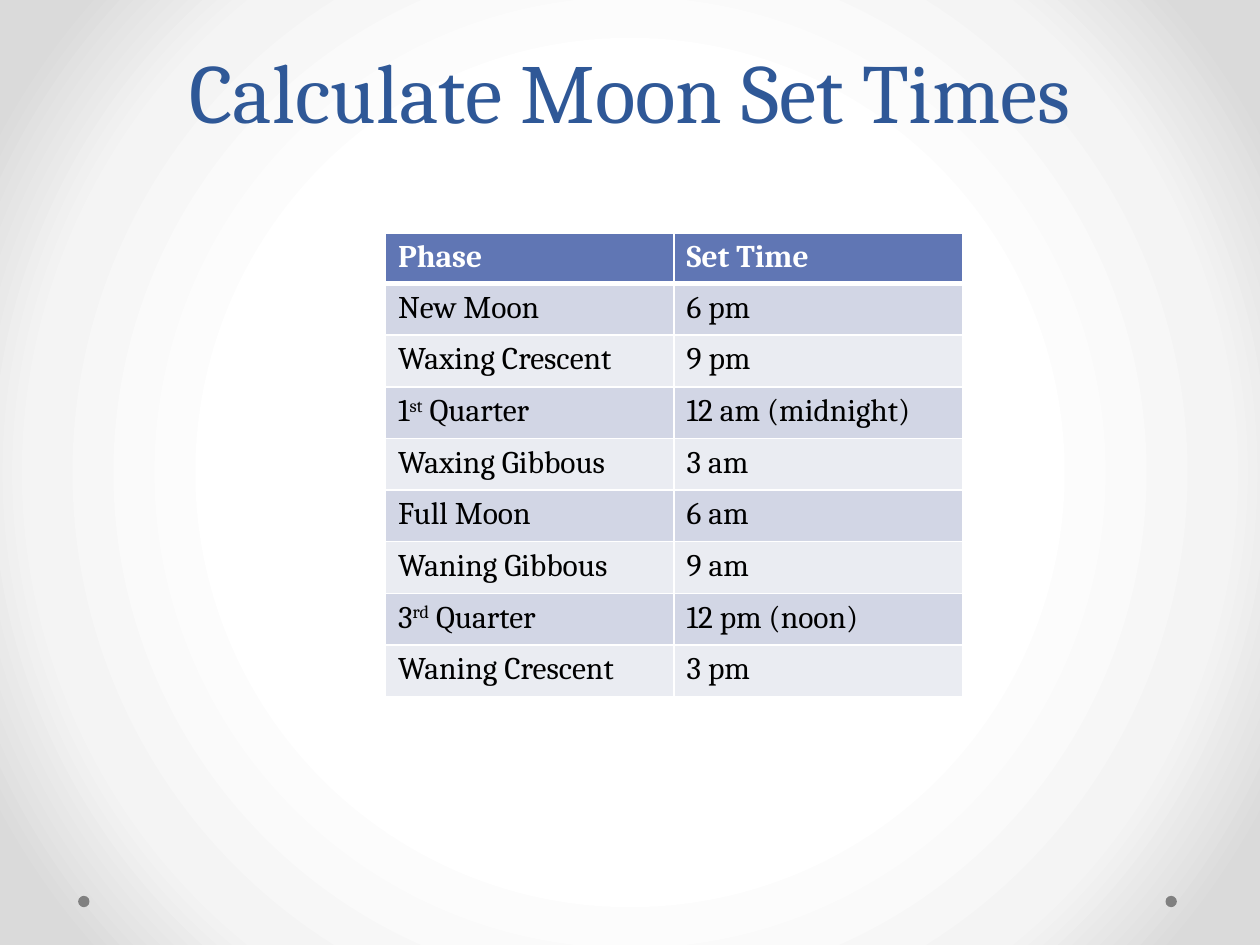
from lxml import etree
from pptx import Presentation
from pptx.dml.color import RGBColor
from pptx.enum.shapes import MSO_SHAPE
from pptx.enum.text import MSO_ANCHOR, PP_ALIGN
from pptx.oxml import parse_xml
from pptx.util import Inches, Pt

OVAL = MSO_SHAPE.OVAL
BOTTOM = MSO_ANCHOR.BOTTOM
CENTER = PP_ALIGN.CENTER
NS = "http://schemas.openxmlformats.org/drawingml/2006/main"

# Content: a tuple holds runs, the second of them raised
TITLE = "Calculate Moon Set Times"
ROWS = [
    ("Phase", "Set Time"),
    ("New Moon", "6 pm"),
    ("Waxing Crescent", "9 pm"),
    (("1", "st", " Quarter"), "12 am (midnight)"),
    ("Waxing Gibbous", "3 am"),
    ("Full Moon", "6 am"),
    ("Waning Gibbous", "9 am"),
    (("3", "rd", " Quarter"), "12 pm (noon)"),
    ("Waning Crescent", "3 pm"),
]
COLORS = {
    "title": "2F5897", "dot": "808080", "head": "6076B4",
    "odd": "D2D6E5", "even": "EAECF2", "white": "FFFFFF", "text": "000000",
}
STOPS = [(50, "FFFFFF"), (76, "F4F4F4"), (92, "DADADA")]
FONTS = {
    "title": {"size": Pt(48), "name": "Cambria", "bold": False},
    "head": {"size": Pt(18), "name": "Cambria", "bold": True},
    "body": {"size": Pt(18), "name": "Cambria", "bold": False},
}


def rgb(key):
    return RGBColor.from_string(COLORS[key])


def add_run(para, text, style, color, raised=False):
    run = para.add_run()
    run.text = text
    for name, value in FONTS[style].items():
        setattr(run.font, name, value)
    run.font.color.rgb = rgb(color)
    if raised:
        run.font._element.set("baseline", "30000")


def add_edges(cell, widths):
    props = cell._tc.get_or_add_tcPr()
    for i, (side, width) in enumerate(widths.items()):
        line = etree.Element(f"{{{NS}}}ln{side}", w=str(Pt(width)))
        fill = etree.SubElement(line, f"{{{NS}}}solidFill")
        etree.SubElement(fill, f"{{{NS}}}srgbClr", val=COLORS["white"])
        props.insert(i, line)


prs = Presentation()
prs.slide_width, prs.slide_height = Inches(10), Inches(7.5)
slide = prs.slides.add_slide(prs.slide_layouts[6])

# Round gradient background
slide.background.fill.solid()
solid = next(slide.element.iter(f"{{{NS}}}solidFill"))
stops = "".join(
    f'<a:gs pos="{pos * 1000}"><a:srgbClr val="{color}"/></a:gs>'
    for pos, color in STOPS
)
grad = parse_xml(
    f'<a:gradFill xmlns:a="{NS}" rotWithShape="1"><a:gsLst>{stops}</a:gsLst>'
    '<a:path path="circle"><a:fillToRect l="50000" t="50000" r="50000" b="50000"/>'
    "</a:path></a:gradFill>"
)
solid.getparent().replace(solid, grad)

# Corner dots
for left in (9.25, 0.62):
    dot = slide.shapes.add_shape(
        OVAL, Inches(left), Inches(7.11), Inches(0.09), Inches(0.09))
    dot.shadow.inherit = False
    dot.fill.solid()
    dot.fill.fore_color.rgb = rgb("dot")
    dot.line.fill.background()

# Title
box = slide.shapes.add_textbox(Inches(0.5), 0, Inches(9), Inches(1.16))
frame = box.text_frame
frame.word_wrap = True
frame.vertical_anchor = BOTTOM
para = frame.paragraphs[0]
para.alignment = CENTER
para.line_spacing = Pt(58)
add_run(para, TITLE, "title", "title")

# Table of phases
table = slide.shapes.add_table(
    len(ROWS), 2, Inches(3.06), Inches(1.85), Inches(4.59), Inches(3.7)).table
for col in table.columns:
    col.width = Inches(2.29)
for r, row in enumerate(ROWS):
    table.rows[r].height = Inches(0.41 if r else 0.32)
    style, color = ("body", "text") if r else ("head", "white")
    back = ("even", "odd")[r % 2] if r else "head"
    edges = {"L": 1, "R": 1, "T": 3 if r == 1 else 1, "B": 1 if r else 3}
    for c, text in enumerate(row):
        cell = table.cell(r, c)
        cell.fill.solid()
        cell.fill.fore_color.rgb = rgb(back)
        add_edges(cell, edges)
        runs = (text,) if isinstance(text, str) else text
        for i, part in enumerate(runs):
            add_run(cell.text_frame.paragraphs[0], part, style, color, i == 1)

prs.save("out.pptx")
